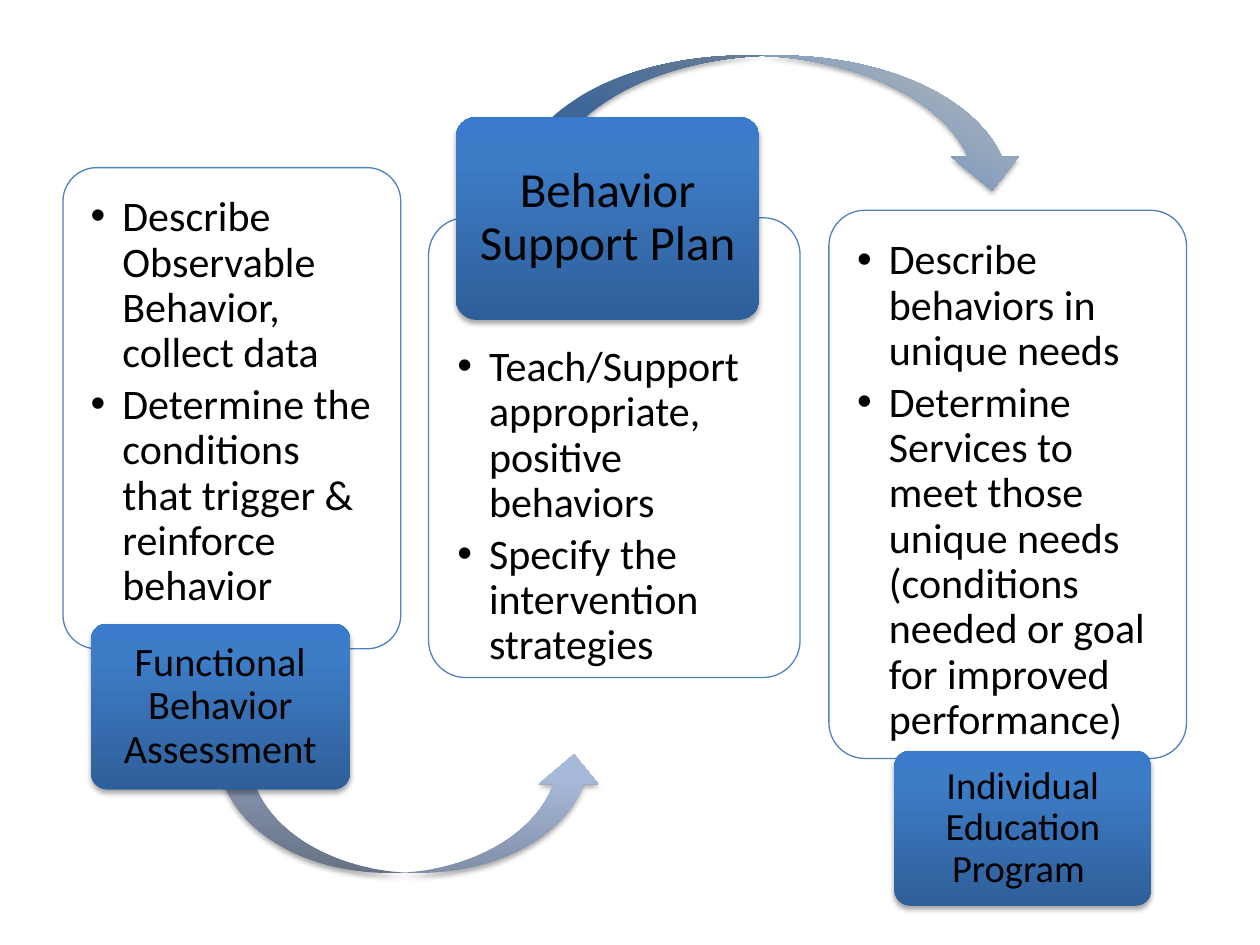
from lxml.etree import SubElement
from pptx import Presentation
from pptx.dml.color import RGBColor
from pptx.enum.shapes import MSO_SHAPE
from pptx.enum.text import MSO_ANCHOR, PP_ALIGN
from pptx.oxml.ns import qn
from pptx.util import Cm, Pt


def color(hex_code):
    return RGBColor.from_string(hex_code)


def shade(part, stops, angle):
    part.fill.gradient()
    part.line.fill.background()
    part.shadow.inherit = False
    properties = part._element.spPr
    gradient = properties.find(qn("a:gradFill"))
    stop_list = gradient.find(qn("a:gsLst"))
    for old_stop in list(stop_list):
        stop_list.remove(old_stop)
    for position, hex_code in stops:
        stop = SubElement(stop_list, qn("a:gs"), pos=str(position * 1000))
        SubElement(stop, qn("a:srgbClr"), val=hex_code)
    gradient.find(qn("a:lin")).set("ang", str(angle * 60000))
    shadow = SubElement(properties.find(qn("a:effectLst")), qn("a:outerShdw"),
                        blurRad=str(Pt(3.1)), dist=str(Pt(1.8)), dir="5400000", rotWithShape="0")
    black = SubElement(shadow, qn("a:srgbClr"), val="000000")
    SubElement(black, qn("a:alpha"), val="35000")


LABEL_STOPS = [(0, "2F5F99"), (80, "3D7CC7"), (100, "3A7CCB")]
PADDING = 0.36

stages = [
    {
        "panel": (1.27, 3.38, 6.81, 9.7), "top": PADDING,
        "steps": ["Describe Observable Behavior, collect data",
                  "Determine the conditions that trigger & reinforce behavior"],
        "arrow": (MSO_SHAPE.CURVED_UP_ARROW, (4.42, 15.21, 7.75, 2.39),
                  [(0, "818FA8"), (80, "A7B9DA"), (100, "A7BADC")], 270),
        "label": (1.83, 12.57, 5.23, 3.35), "name": "Functional Behavior Assessment", "size": 23,
    },
    {
        "panel": (8.64, 4.39, 7.49, 9.27), "top": 2.35,
        "steps": ["Teach/Support appropriate, positive behaviors",
                  "Specify the intervention strategies"],
        "arrow": (MSO_SHAPE.CURVED_DOWN_ARROW, (10.39, 1.12, 10.29, 2.72),
                  [(28, "4F81BD"), (100, "BDBDBD")], 300),
        "label": (9.19, 2.36, 6.12, 4.09), "name": "Behavior Support Plan", "size": 28,
    },
    {
        "panel": (16.71, 4.24, 7.21, 11.05), "top": PADDING,
        "steps": ["Describe behaviors in unique needs",
                  "Determine Services to meet those unique needs "
                  "(conditions needed or goal for improved performance)"],
        "arrow": None,
        "label": (18.03, 15.14, 5.18, 3.12), "name": "Individual Education Program ", "size": 22,
    },
]

presentation = Presentation()
presentation.slide_width = Cm(25.4)
presentation.slide_height = Cm(19.05)
slide = presentation.slides.add_slide(presentation.slide_layouts[6])

for stage in stages:
    panel = slide.shapes.add_shape(MSO_SHAPE.ROUNDED_RECTANGLE, *map(Cm, stage["panel"]))
    panel.adjustments[0] = 0.1
    panel.fill.solid()
    panel.fill.fore_color.rgb = color("FFFFFF")
    white = panel._element.spPr.find(qn("a:solidFill")).find(qn("a:srgbClr"))
    SubElement(white, qn("a:alpha"), val="90000")
    panel.line.color.rgb = color("4F81BD")
    panel.line.width = Pt(0.75)
    panel.shadow.inherit = False

    steps = panel.text_frame
    steps.word_wrap = True
    steps.vertical_anchor = MSO_ANCHOR.TOP
    steps.margin_left = steps.margin_right = steps.margin_bottom = Cm(PADDING)
    steps.margin_top = Cm(stage["top"])
    for index, step in enumerate(stage["steps"]):
        paragraph = steps.paragraphs[0] if index == 0 else steps.add_paragraph()
        paragraph.alignment = PP_ALIGN.LEFT
        paragraph.level = 1
        paragraph.line_spacing = 0.9
        paragraph.space_after = Pt(3.6)
        indents = paragraph._p.get_or_add_pPr()
        indents.set("marL", str(Cm(0.64)))
        indents.set("indent", str(Cm(-0.64)))
        SubElement(indents, qn("a:buFont"), typeface="Arial")
        SubElement(indents, qn("a:buChar"), char="•")
        run = paragraph.add_run()
        run.text = step
        run.font.name = "Calibri"
        run.font.size = Pt(24)
        run.font.color.rgb = color("000000")

    if stage["arrow"]:
        direction, place, stops, angle = stage["arrow"]
        arrow = slide.shapes.add_shape(direction, *map(Cm, place))
        shade(arrow, stops, angle)

    label = slide.shapes.add_shape(MSO_SHAPE.ROUNDED_RECTANGLE, *map(Cm, stage["label"]))
    label.adjustments[0] = 0.1
    shade(label, LABEL_STOPS, 270)
    name = label.text_frame
    name.word_wrap = True
    name.vertical_anchor = MSO_ANCHOR.MIDDLE
    name.margin_left = name.margin_right = Cm(0.13)
    name.margin_top = name.margin_bottom = Cm(0.08)
    paragraph = name.paragraphs[0]
    paragraph.alignment = PP_ALIGN.CENTER
    paragraph.line_spacing = 0.9
    run = paragraph.add_run()
    run.text = stage["name"]
    run.font.name = "Calibri"
    run.font.size = Pt(stage["size"])
    run.font.color.rgb = color("000000")

presentation.save("out.pptx")
